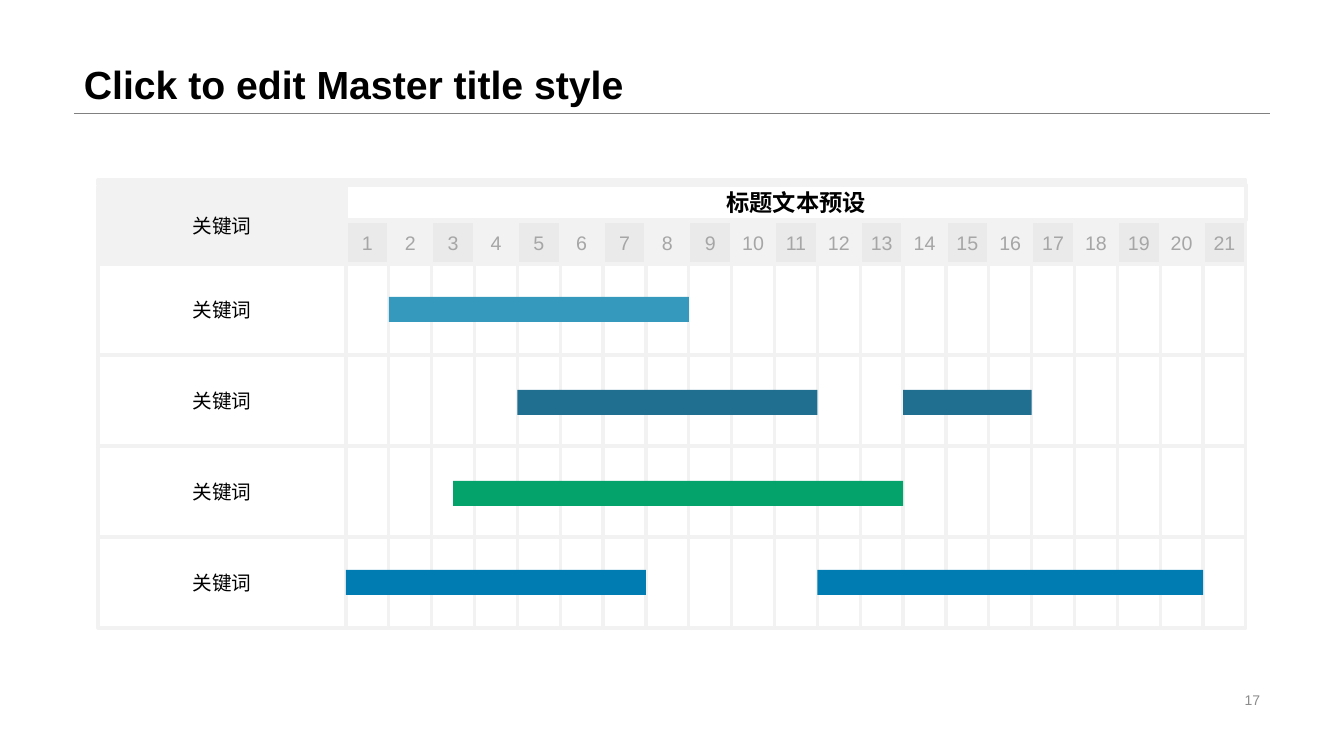
from lxml.etree import SubElement
from pptx import Presentation
from pptx.dml.color import RGBColor
from pptx.enum.shapes import MSO_CONNECTOR, MSO_SHAPE
from pptx.enum.text import MSO_ANCHOR, PP_ALIGN
from pptx.oxml.ns import qn
from pptx.util import Pt

# Content
TITLE = "Click to edit Master title style"
PAGE_NUMBER = "17"
CORNER_LABEL = "关键词"
CALENDAR_TITLE = "标题文本预设"
DAY_COUNT = 21

BLACK = RGBColor(0x00, 0x00, 0x00)
WHITE = RGBColor(0xFF, 0xFF, 0xFF)
GRID_GRAY = RGBColor(0xF2, 0xF2, 0xF2)
ODD_DAY_GRAY = RGBColor(0xEA, 0xEA, 0xEA)
DAY_TEXT_GRAY = RGBColor(0xA6, 0xA6, 0xA6)
PAGE_GRAY = RGBColor(0x8C, 0x8C, 0x8C)
RULE_GRAY = RGBColor(0x80, 0x80, 0x80)
LIGHT_BLUE = RGBColor(0x35, 0x99, 0xBD)
DARK_BLUE = RGBColor(0x20, 0x6F, 0x90)
GREEN = RGBColor(0x04, 0xA3, 0x6B)
BLUE = RGBColor(0x00, 0x7C, 0xB2)

# Each task: label, bar colour, bar top, bars as (first day, length in days)
TASKS = [
    ("关键词", LIGHT_BLUE, 297, [(2, 7)]),
    ("关键词", DARK_BLUE, 390, [(5, 7), (14, 3)]),
    ("关键词", GREEN, 481, [(3.5, 10.5)]),
    ("关键词", BLUE, 570, [(1, 7), (12, 9)]),
]

# Layout in px
PX = 914400 / 100.8
LABEL_LEFT, LABEL_WIDTH = 98, 248
DAYS_LEFT, DAYS_WIDTH = 346, 900
DAY_WIDTH = DAYS_WIDTH / DAY_COUNT
DAYS_TOP, ROWS_TOP, ROW_HEIGHT = 221, 264, 91
BAR_HEIGHT = 25


def emu(*lengths):
    return [round(length * PX) for length in lengths]


def day_x(day):
    return DAYS_LEFT + (day - 1) * DAY_WIDTH


def write(shape, text, size, color, align, anchor=MSO_ANCHOR.MIDDLE, bold=False, wrap=True):
    frame = shape.text_frame
    frame.word_wrap = wrap
    frame.vertical_anchor = anchor
    paragraph = frame.paragraphs[0]
    paragraph.text = text
    paragraph.alignment = align
    paragraph.font.name = "Arial"
    paragraph.font.size = Pt(size)
    paragraph.font.bold = bold
    paragraph.font.color.rgb = color
    return paragraph


def add_rectangle(slide, left, top, width, height, fill, outlined=True):
    shape = slide.shapes.add_shape(MSO_SHAPE.RECTANGLE, *emu(left, top, width, height))
    shape.shadow.inherit = False
    shape.fill.solid()
    shape.fill.fore_color.rgb = fill
    if outlined:
        shape.line.color.rgb = GRID_GRAY
        shape.line.width = Pt(2.25)
    else:
        shape.line.fill.background()
    return shape


def add_heading(slide):
    rule = slide.shapes.add_connector(MSO_CONNECTOR.STRAIGHT, *emu(74, 113, 1270, 113))
    rule.line.color.rgb = RULE_GRAY
    rule.line.width = Pt(0.25)
    SubElement(rule._element.spPr, qn("a:effectLst"))
    title = slide.shapes.add_textbox(*emu(74, 0, 1196, 113))
    paragraph = write(title, TITLE, 28, BLACK, PP_ALIGN.LEFT, MSO_ANCHOR.BOTTOM, bold=True)
    paragraph.line_spacing = 0.9
    number = slide.shapes.add_textbox(*emu(950, 688, 320, 23))
    write(number, PAGE_NUMBER, 10, PAGE_GRAY, PP_ALIGN.RIGHT)


def add_calendar_header(slide):
    add_rectangle(slide, LABEL_LEFT, 180, LABEL_WIDTH + DAYS_WIDTH, 5, GRID_GRAY)
    corner = add_rectangle(slide, LABEL_LEFT, 187, LABEL_WIDTH, ROWS_TOP - 187, GRID_GRAY)
    write(corner, CORNER_LABEL, 14, BLACK, PP_ALIGN.CENTER, wrap=False)
    banner = add_rectangle(slide, DAYS_LEFT, 185, DAYS_WIDTH, 35, WHITE)
    write(banner, CALENDAR_TITLE, 16.6, BLACK, PP_ALIGN.CENTER, bold=True, wrap=False)
    for day in range(1, DAY_COUNT + 1):
        fill = ODD_DAY_GRAY if day % 2 else GRID_GRAY
        cell = add_rectangle(slide, day_x(day), DAYS_TOP, DAY_WIDTH, ROWS_TOP - DAYS_TOP, fill)
        cell.text_frame.margin_left = cell.text_frame.margin_right = 0
        write(cell, str(day), 14, DAY_TEXT_GRAY, PP_ALIGN.CENTER)


def add_tasks(slide):
    # Grid rows
    for row, (label, *_) in enumerate(TASKS):
        top = ROWS_TOP + row * ROW_HEIGHT
        for day in range(1, DAY_COUNT + 1):
            add_rectangle(slide, day_x(day), top, DAY_WIDTH, ROW_HEIGHT, WHITE)
        cell = add_rectangle(slide, LABEL_LEFT, top, LABEL_WIDTH, ROW_HEIGHT, WHITE)
        write(cell, label, 14, BLACK, PP_ALIGN.CENTER, wrap=False)
    # Bars
    for _, color, top, bars in TASKS:
        for first_day, length in bars:
            add_rectangle(slide, day_x(first_day), top, length * DAY_WIDTH, BAR_HEIGHT,
                          color, outlined=False)


def main():
    presentation = Presentation()
    presentation.slide_width, presentation.slide_height = emu(1344, 756)
    slide = presentation.slides.add_slide(presentation.slide_layouts[6])
    add_heading(slide)
    add_calendar_header(slide)
    add_tasks(slide)
    presentation.save("out.pptx")


if __name__ == "__main__":
    main()
